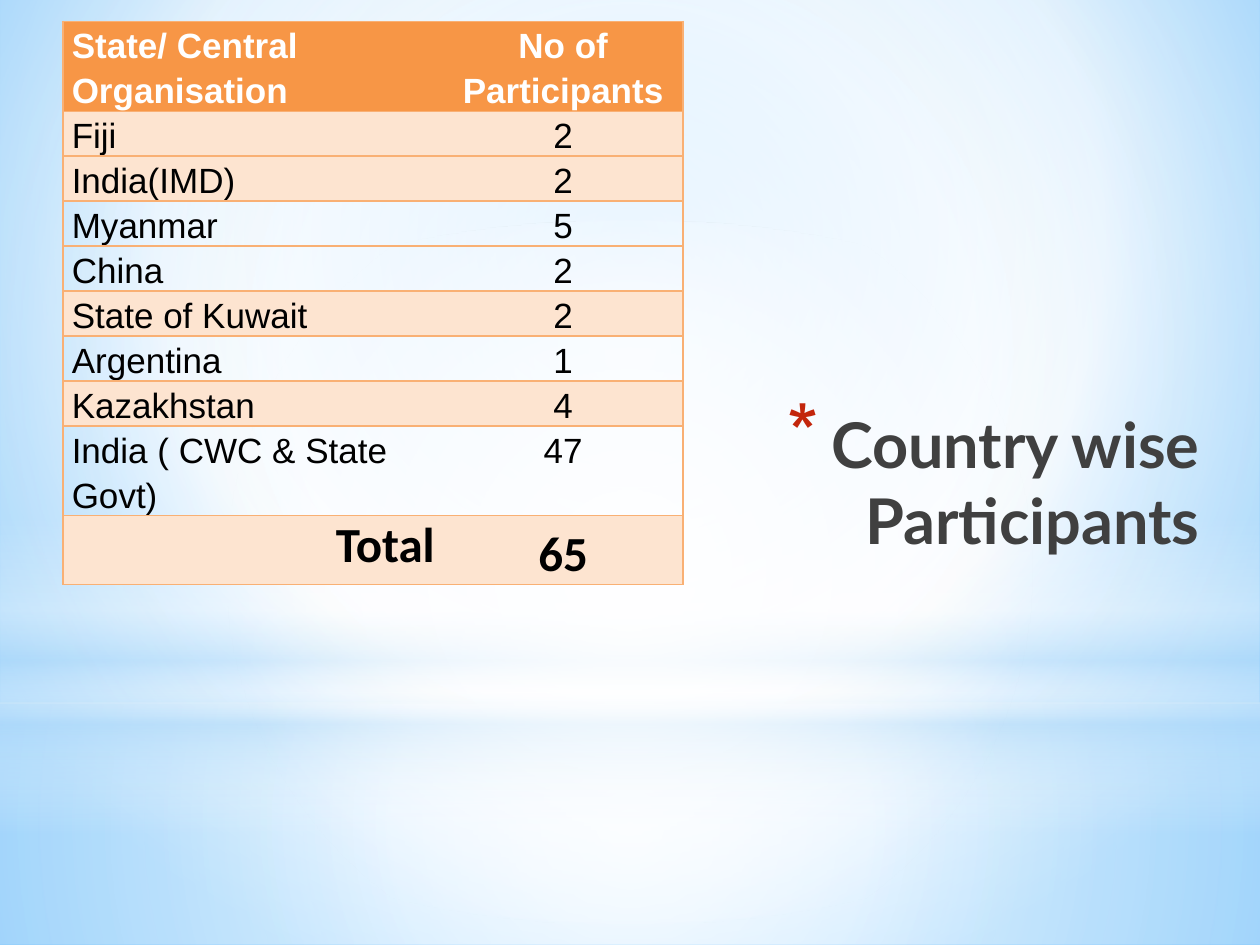
from lxml import etree
from pptx import Presentation
from pptx.dml.color import RGBColor
from pptx.enum.shapes import MSO_SHAPE as Shape
from pptx.enum.text import MSO_ANCHOR as Anchor, PP_ALIGN as Align
from pptx.oxml import parse_xml
from pptx.oxml.ns import nsdecls, qn
from pptx.util import Inches, Pt

COLORS = {
    "white": "FFFFFF", "black": "000000", "title": "404040", "bullet": "C3260C",
    "header": "F79646", "band": "FDE4D0", "border": "F9B074",
    "haze": "B4DCFA", "sky": "9ED5FF", "deep": "5BB9FF",
}
TITLE = "Country wise Participants"
HEADER = ("State/ Central Organisation", "No of Participants")
COUNTRIES = [
    ("Fiji", "2", "band"),
    ("India(IMD)", "2", "band"),
    ("Myanmar", "5", None),
    ("China", "2", None),
    ("State of Kuwait", "2", "band"),
    ("Argentina", "1", None),
    ("Kazakhstan", "4", "band"),
    ("India ( CWC & State Govt)", "47", None),
]
TOTAL = ("Total", "65")
COLUMN_WIDTHS = (3.02, 1.9)
ROW_HEIGHTS = [0.7] + [0.35] * len(COUNTRIES) + [0.38]

CENTER = (50, 50, 50, 50)
SKY_STOPS = [(0, "sky", 100), (60, "white", 100), (100, "deep", 100)]
SKY_FOCUS = (20, 10, 20, 60)
BACKDROP = [
    (Shape.RECTANGLE, 5.58, 1.92, CENTER,
     [(0, "white", 91), (37, "white", 76), (100, "haze", 79)]),
    (Shape.RECTANGLE, 0, 5.58, CENTER,
     [(0, "white", 89), (48, "white", 62), (100, "haze", 79)]),
    (Shape.RECTANGLE, 4.12, 2.5, None,
     [(0, "white", 0), (29, "white", 30), (45, "haze", 40),
      (55, "white", 26), (65, "haze", 60), (100, "white", 0)]),
    (Shape.OVAL, 1.75, 5.58, CENTER, [(0, "white", 100), (56, "white", 0)]),
]


def rgb(name):
    return RGBColor.from_string(COLORS[name])


def set_gradient(fill, element, stops, focus):
    fill.gradient()
    old = next(element.iter(qn("a:gradFill")))
    marks = "".join(
        f'<a:gs pos="{pos * 1000}"><a:srgbClr val="{COLORS[color]}">'
        f'<a:alpha val="{alpha * 1000}"/></a:srgbClr></a:gs>'
        for pos, color, alpha in stops)
    if focus:
        sides = " ".join(f'{side}="{value * 1000}"' for side, value in zip("ltrb", focus))
        direction = f'<a:path path="circle"><a:fillToRect {sides}/></a:path>'
    else:
        direction = '<a:lin ang="5400000" scaled="0"/>'
    new = parse_xml(f'<a:gradFill {nsdecls("a")} rotWithShape="1">'
                    f'<a:gsLst>{marks}</a:gsLst>{direction}</a:gradFill>')
    old.getparent().replace(old, new)


def write(frame, text, font, size, color, bold=False, align=Align.LEFT, spacing=1.0):
    para = frame.paragraphs[0]
    para.alignment = align
    para.line_spacing = spacing
    span = para.add_run()
    span.text = text
    span.font.name = font
    span.font.size = Pt(size)
    span.font.bold = bold
    span.font.color.rgb = rgb(color)
    return para


def set_borders(cell, inner_side):
    properties = cell._tc.get_or_add_tcPr()
    for index, side in enumerate("LRTB"):
        paint = ("<a:noFill/>" if side == inner_side else
                 f'<a:solidFill><a:srgbClr val="{COLORS["border"]}"/></a:solidFill>')
        properties.insert(index, parse_xml(
            f'<a:ln{side} {nsdecls("a")} w="{Pt(1)}">{paint}</a:ln{side}>'))


def fill_row(table, row, texts, fill, aligns=(Align.LEFT, Align.CENTER),
             spacings=(1.15, 1.15), **style):
    for column, text in enumerate(texts):
        cell = table.cell(row, column)
        cell.margin_left = cell.margin_right = Inches(0.07)
        cell.margin_top = cell.margin_bottom = 0
        if fill:
            cell.fill.solid()
            cell.fill.fore_color.rgb = rgb(fill)
        else:
            cell.fill.background()
        set_borders(cell, "RL"[column])
        write(cell.text_frame, text, align=aligns[column],
              spacing=spacings[column], **style)


def add_backdrop(page):
    set_gradient(page.background.fill, page.element, SKY_STOPS, SKY_FOCUS)
    for kind, top, height, focus, stops in BACKDROP:
        shape = page.shapes.add_shape(kind, 0, Inches(top), Inches(10), Inches(height))
        shape.shadow.inherit = False
        shape.line.fill.background()
        set_gradient(shape.fill, shape.element, stops, focus)


def place_title(page):
    title = page.shapes.title
    page.shapes.element.append(title.element)
    title.left, title.top = Inches(5.75), Inches(3.17)
    title.width, title.height = Inches(3.87), Inches(4.08)
    frame = title.text_frame
    frame.word_wrap = True
    frame.vertical_anchor = Anchor.TOP
    para = write(frame, TITLE, font="Lato", size=36, color="title", bold=True,
                 align=Align.RIGHT)
    properties = para._p.get_or_add_pPr()
    properties.set("marL", str(Inches(0.35)))
    properties.set("indent", str(-Inches(0.35)))
    color = etree.SubElement(properties, qn("a:buClr"))
    etree.SubElement(color, qn("a:srgbClr"), val=COLORS["bullet"])
    etree.SubElement(properties, qn("a:buSzPct"), val="128000")
    etree.SubElement(properties, qn("a:buChar"), char="*")


def add_participants(page):
    table = page.shapes.add_table(
        len(ROW_HEIGHTS), len(COLUMN_WIDTHS), Inches(0.5), Inches(0.17),
        Inches(sum(COLUMN_WIDTHS)), Inches(sum(ROW_HEIGHTS))).table
    table.first_row = table.horz_banding = False
    for column, width in zip(table.columns, COLUMN_WIDTHS):
        column.width = Inches(width)
    for row, height in zip(table.rows, ROW_HEIGHTS):
        row.height = Inches(height)
    fill_row(table, 0, HEADER, "header", font="Arial", size=20, color="white", bold=True)
    for row, (country, count, fill) in enumerate(COUNTRIES, 1):
        fill_row(table, row, (country, count), fill, font="Arial", size=20, color="black")
    fill_row(table, len(COUNTRIES) + 1, TOTAL, "band", aligns=(Align.RIGHT, Align.CENTER),
             spacings=(1.0, 1.15), font="Calibri", size=28, color="black", bold=True)


def main():
    deck = Presentation()
    deck.slide_width, deck.slide_height = Inches(10), Inches(7.5)
    page = deck.slides.add_slide(deck.slide_layouts[5])
    add_backdrop(page)
    place_title(page)
    add_participants(page)
    deck.save("out.pptx")


if __name__ == "__main__":
    main()
